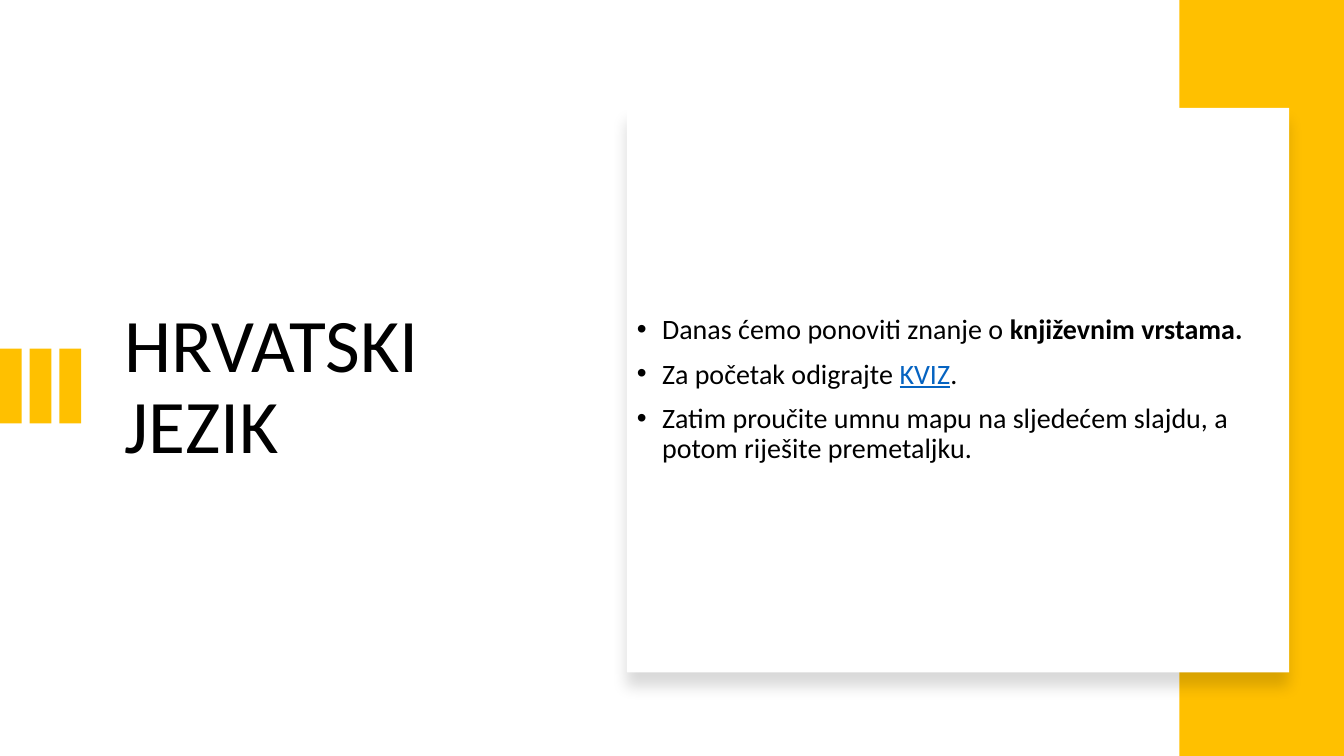
from lxml.etree import SubElement
from pptx import Presentation
from pptx.dml.color import RGBColor
from pptx.enum.shapes import MSO_SHAPE
from pptx.enum.text import MSO_ANCHOR
from pptx.oxml.ns import qn
from pptx.util import Pt

BLACK = RGBColor(0x00, 0x00, 0x00)
WHITE = RGBColor(0xFF, 0xFF, 0xFF)
GOLD = RGBColor(0xFF, 0xC0, 0x00)
BLUE = RGBColor(0x05, 0x63, 0xC1)

PAGE_WIDTH, PAGE_HEIGHT = 960, 540
CARD = (447.84, 77.04, 473.04, 403.2)
BAR_WIDTH, BAR_STEP = 15.5, 21.24

BULLETS = [
    [("Danas ćemo ponoviti znanje o ", {}), ("književnim vrstama.", {"bold": True})],
    [("Za početak odigrajte ", {}), ("KVIZ", {"underline": True, "color": BLUE}), (".", {})],
    [("Zatim proučite umnu mapu na sljedećem slajdu, a potom riješite premetaljku.", {})],
]


class SlideBuilder:
    font_name = "Calibri"
    line_spacing = 0.9
    indent = 18
    paragraph_gap = 10

    def __init__(self, page):
        self.page = page

    def rectangle(self, bounds, color):
        box = self.page.shapes.add_shape(MSO_SHAPE.RECTANGLE, *map(Pt, bounds))
        box.shadow.inherit = False
        box.fill.solid()
        box.fill.fore_color.rgb = color
        box.line.fill.background()
        return box

    def card(self, bounds):
        box = self.rectangle(bounds, WHITE)
        effects = box._element.spPr.find(qn("a:effectLst"))
        shadow = SubElement(effects, qn("a:outerShdw"), {
            "blurRad": str(Pt(11)), "dist": str(Pt(10)), "dir": "5400000",
            "algn": "t", "rotWithShape": "0",
        })
        color = SubElement(shadow, qn("a:srgbClr"), val=str(BLACK))
        SubElement(color, qn("a:alpha"), val="15000")

    def text(self, bounds, paragraphs, size, bulleted=False):
        box = self.page.shapes.add_textbox(*map(Pt, bounds))
        frame = box.text_frame
        frame.word_wrap = True
        frame.vertical_anchor = MSO_ANCHOR.MIDDLE
        for index, spans in enumerate(paragraphs):
            para = frame.add_paragraph() if index else frame.paragraphs[0]
            para.line_spacing = self.line_spacing
            if index:
                para.space_before = Pt(self.paragraph_gap)
            if bulleted:
                self.bullet(para)
            for content, formats in spans:
                self.span(para, content, {"size": Pt(size), **formats})

    def bullet(self, para):
        properties = para._p.get_or_add_pPr()
        properties.set("marL", str(Pt(self.indent)))
        properties.set("indent", str(-Pt(self.indent)))
        SubElement(properties, qn("a:buFont"), typeface="Arial")
        SubElement(properties, qn("a:buChar"), char="•")

    def span(self, para, content, formats):
        span = para.add_run()
        span.text = content
        values = {"name": self.font_name, "color": BLACK, **formats}
        span.font.color.rgb = values.pop("color")
        for name, value in values.items():
            setattr(span.font, name, value)


def main():
    deck = Presentation()
    deck.slide_width, deck.slide_height = Pt(PAGE_WIDTH), Pt(PAGE_HEIGHT)
    builder = SlideBuilder(deck.slides.add_slide(deck.slide_layouts[6]))

    builder.text((82.08, 105.12, 306.72, 344.88), [[("HRVATSKI JEZIK", {})]], 54)
    for index in range(3):
        builder.rectangle((index * BAR_STEP, 249.12, BAR_WIDTH, 53.28), GOLD)
    builder.rectangle((842.4, 0, PAGE_WIDTH - 842.4, PAGE_HEIGHT), GOLD)
    builder.card(CARD)
    builder.text(CARD, BULLETS, 20, bulleted=True)

    deck.save("out.pptx")


if __name__ == "__main__":
    main()
